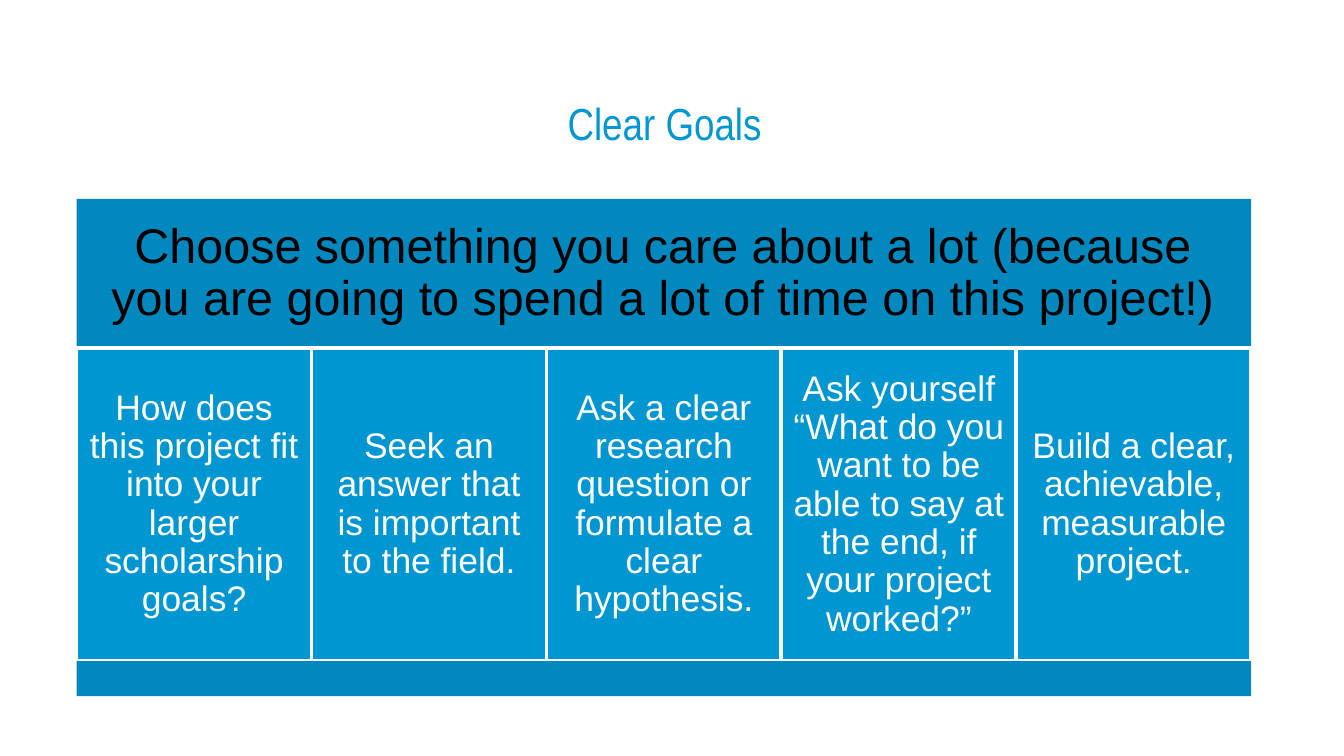
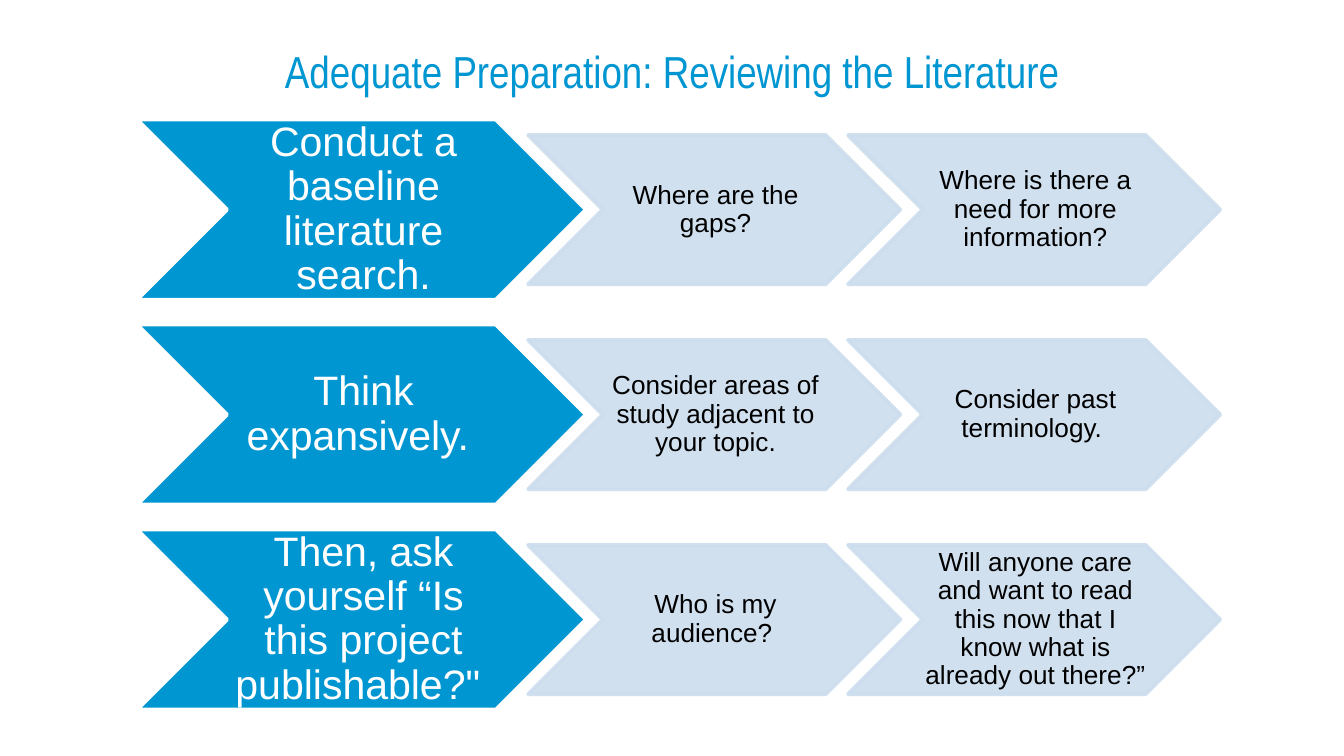
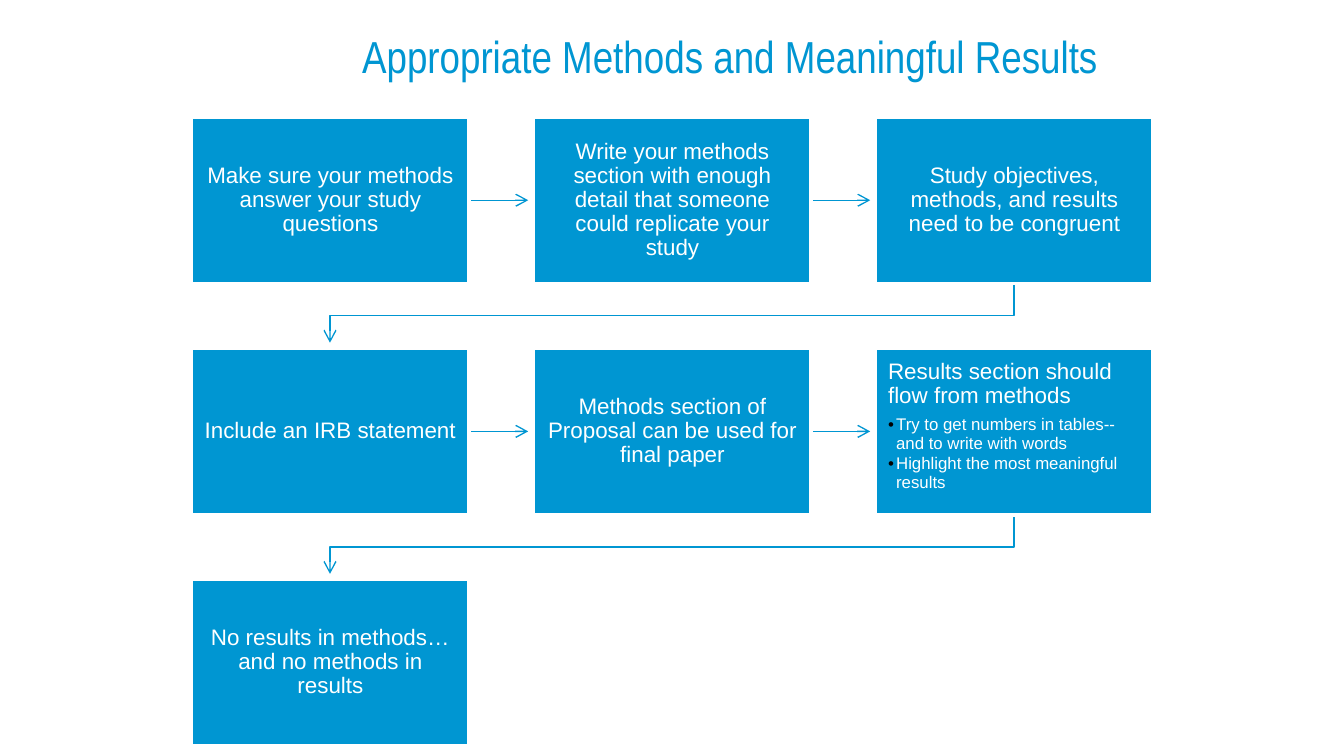
from lxml import etree
from pptx import Presentation
from pptx.dml.color import RGBColor
from pptx.enum.shapes import MSO_CONNECTOR, MSO_SHAPE
from pptx.enum.text import MSO_ANCHOR, MSO_AUTO_SIZE, PP_ALIGN
from pptx.oxml.ns import qn
from pptx.util import Inches, Pt

RECT, CHEVRON = MSO_SHAPE.RECTANGLE, MSO_SHAPE.CHEVRON
STRAIGHT = MSO_CONNECTOR.STRAIGHT
CENTER, LEFT = PP_ALIGN.CENTER, PP_ALIGN.LEFT
MIDDLE, TOP, BOTTOM = MSO_ANCHOR.MIDDLE, MSO_ANCHOR.TOP, MSO_ANCHOR.BOTTOM
NO_AUTOFIT = MSO_AUTO_SIZE.NONE
TITLE_ONLY = 5

COLORS = {"blue": "0096D2", "band": "0088BF", "pale": "CCDDEE",
          "white": "FFFFFF", "black": "000000"}
BODY_FONT, TITLE_FONT = "Arial", "Arial Narrow"

GOAL_BANNER = ("Choose something you care about a lot (because you are going "
               "to spend a lot of time on this project!)")
GOALS = [
    "How does this project fit into your larger scholarship goals?",
    "Seek an answer that is important to the field.",
    "Ask a clear research question or formulate a clear hypothesis.",
    "Ask yourself “What do you want to be able to say at the end, if your "
    "project worked?”",
    "Build a clear, achievable, measurable project.",
]
REVIEW_STEPS = [
    ("Conduct a baseline literature search.",
     ["Where are the gaps?", "Where is there a need for more information?"]),
    ("Think expansively. ",
     ["Consider areas of study adjacent to your topic.",
      "Consider past terminology. "]),
    ("Then, ask yourself “Is this project publishable?\" ",
     ["Who is my audience? ",
      "Will anyone care and want to read this now that I know what is already "
      "out there?”"]),
]
METHOD_STEPS = [
    ("Make sure your methods answer your study questions", []),
    ("Write your methods section with enough detail that someone could "
     "replicate your study", []),
    ("Study objectives, methods, and results need to be congruent", []),
    ("Include an IRB statement", []),
    ("Methods section of Proposal can be used for final paper", []),
    ("Results section should flow from methods",
     ["Try to get numbers in tables--and to write with words",
      "Highlight the most meaningful results"]),
    ("No results in methods… and no methods in results", []),
]


def rgb(name):
    return RGBColor.from_string(COLORS[name])


def set_attributes(target, values):
    for name, value in values.items():
        setattr(target, name, value)


def format_paragraph(paragraph, size, color, align=CENTER, font=BODY_FONT, after=0):
    set_attributes(paragraph, {"alignment": align, "line_spacing": 0.9,
                               "space_before": Pt(0), "space_after": Pt(after)})
    set_attributes(paragraph.font, {"name": font, "size": Pt(size)})
    paragraph.font.color.rgb = rgb(color)


def format_frame(frame, insets, anchor=MIDDLE):
    """Set anchor, wrapping and the left, top, right, bottom insets."""
    sides = ("margin_left", "margin_top", "margin_right", "margin_bottom")
    set_attributes(frame, {"word_wrap": True, "auto_size": NO_AUTOFIT,
                           "vertical_anchor": anchor})
    set_attributes(frame, dict(zip(sides, map(Inches, insets))))


def add_title(slide, text, box):
    title = slide.shapes.title
    set_attributes(title, dict(zip(("left", "top", "width", "height"),
                                   map(Inches, box))))
    title.text_frame.text = text
    format_frame(title.text_frame, (0.1, 0.05, 0.1, 0.05), BOTTOM)
    format_paragraph(title.text_frame.paragraphs[0], 24, "blue", font=TITLE_FONT)


def add_panel(slide, kind, box, fill, outline=None, opacity=None):
    panel = slide.shapes.add_shape(kind, *map(Inches, box))
    panel.shadow.inherit = False
    panel.fill.solid()
    panel.fill.fore_color.rgb = rgb(fill)
    if outline:
        panel.line.color.rgb = rgb(outline)
        panel.line.width = Pt(2)
    else:
        panel.line.fill.background()
    if opacity:
        for color in panel._element.spPr.iter(qn("a:srgbClr")):
            etree.SubElement(color, qn("a:alpha"), val=str(opacity * 1000))
    return panel


def write_label(panel, text, size, color, insets):
    panel.text_frame.text = text
    format_frame(panel.text_frame, insets)
    format_paragraph(panel.text_frame.paragraphs[0], size, color)


def add_bullet(frame, text):
    paragraph = frame.add_paragraph()
    paragraph.text = text
    properties = paragraph._p.get_or_add_pPr()
    properties.set("marL", str(Inches(0.06)))
    properties.set("indent", str(Inches(-0.06)))
    bullet_color = etree.SubElement(properties, qn("a:buClr"))
    etree.SubElement(bullet_color, qn("a:srgbClr"), val=COLORS["black"])
    etree.SubElement(properties, qn("a:buFont"), typeface=BODY_FONT)
    etree.SubElement(properties, qn("a:buChar"), char="•")
    format_paragraph(paragraph, 9, "white", LEFT, after=1.35)


def style_arrow(arrow):
    arrow.line.color.rgb = rgb("blue")
    arrow.line.width = Pt(0.75)
    etree.SubElement(arrow.line._get_or_add_ln(), qn("a:tailEnd"), type="arrow")


def add_straight_arrow(slide, x, y, length):
    arrow = slide.shapes.add_connector(
        STRAIGHT, *map(Inches, (x, y, x + length, y)))
    style_arrow(arrow)
    etree.SubElement(arrow._element.spPr, qn("a:effectLst"))


def add_return_arrow(slide, start_x, end_x, y):
    """Lead from the end of one row down and back to the start of the next."""
    points = [(start_x, y + 0.24), (end_x, y + 0.24), (end_x, y + 0.44)]
    builder = slide.shapes.build_freeform(Inches(start_x), Inches(y))
    builder.add_line_segments([tuple(map(Inches, point)) for point in points],
                              close=False)
    arrow = builder.convert_to_shape()
    arrow.shadow.inherit = False
    arrow.fill.background()
    style_arrow(arrow)


def add_goal_panels(slide, left, top, width):
    banner_height, goal_height, base_height = 1.11, 2.33, 0.26
    goals_top = top + banner_height
    goal_width = width / len(GOALS)

    banner = add_panel(slide, RECT, (left, top, width, banner_height), "band")
    write_label(banner, GOAL_BANNER, 26, "black", [0.11] * 4)
    for column, goal in enumerate(GOALS):
        box = (left + column * goal_width, goals_top, goal_width, goal_height)
        panel = add_panel(slide, RECT, box, "blue", "white")
        write_label(panel, goal, 19, "white", [0.08] * 4)
    add_panel(slide, RECT, (left, goals_top + goal_height, width, base_height), "band")


def add_review_row(slide, left, top, step, questions):
    step_height, question_height = 1.34, 1.11
    chevron = add_panel(slide, CHEVRON, (left, top, 3.34, step_height),
                        "blue", "white")
    write_label(chevron, step, 22, "white", (0.03, 0.02, 0, 0.02))
    question_top = top + (step_height - question_height) / 2
    for column, question in enumerate(questions):
        box = (left + 2.91 + column * 2.38, question_top, 2.77, question_height)
        chevron = add_panel(slide, CHEVRON, box, "pale", "pale", opacity=90)
        write_label(chevron, question, 14, "black", (0.02, 0.01, 0, 0.01))


def add_method_step(slide, box, text, details):
    panel = add_panel(slide, RECT, box, "blue", "white")
    write_label(panel, text, 12, "white", (0.1, 0.09, 0.09, 0.09))
    if details:
        frame = panel.text_frame
        frame.vertical_anchor = TOP
        format_paragraph(frame.paragraphs[0], 12, "white", LEFT, after=4.2)
        for detail in details:
            add_bullet(frame, detail)


def add_method_flow(slide, left, top):
    columns, width, height = 3, 2.07, 1.24
    span, row_pitch = 5.09, 1.72
    column_pitch = span / (columns - 1)
    for index, (text, details) in enumerate(METHOD_STEPS):
        row, column = divmod(index, columns)
        x, y = left + column * column_pitch, top + row * row_pitch
        if index < len(METHOD_STEPS) - 1:
            if column < columns - 1:
                add_straight_arrow(slide, x + width, y + height / 2, 0.44)
            else:
                add_return_arrow(slide, x + width / 2, left + width / 2, y + height)
        add_method_step(slide, (x, y, width, height), text, details)


def build_goals(slide):
    add_title(slide, "Clear Goals", (2.82, 0.68, 4.25, 0.49))
    add_goal_panels(slide, 0.57, 1.48, 8.74)


def build_review(slide):
    add_title(slide, "Adequate Preparation: Reviewing the Literature",
              (1.94, 0.29, 6.12, 0.49))
    row_pitch = 3.05 / (len(REVIEW_STEPS) - 1)
    for row, (step, questions) in enumerate(REVIEW_STEPS):
        add_review_row(slide, 1.02, 0.89 + row * row_pitch, step, questions)


def build_methods(slide):
    add_title(slide, "Appropriate Methods and Meaningful Results",
              (2.05, 0.18, 6.76, 0.49))
    add_method_flow(slide, 1.42, 0.87)


def main():
    deck = Presentation()
    deck.slide_width = Inches(10)
    deck.slide_height = deck.slide_width * 9 // 16
    for build in (build_goals, build_review, build_methods):
        build(deck.slides.add_slide(deck.slide_layouts[TITLE_ONLY]))
    deck.save("out.pptx")


if __name__ == "__main__":
    main()
